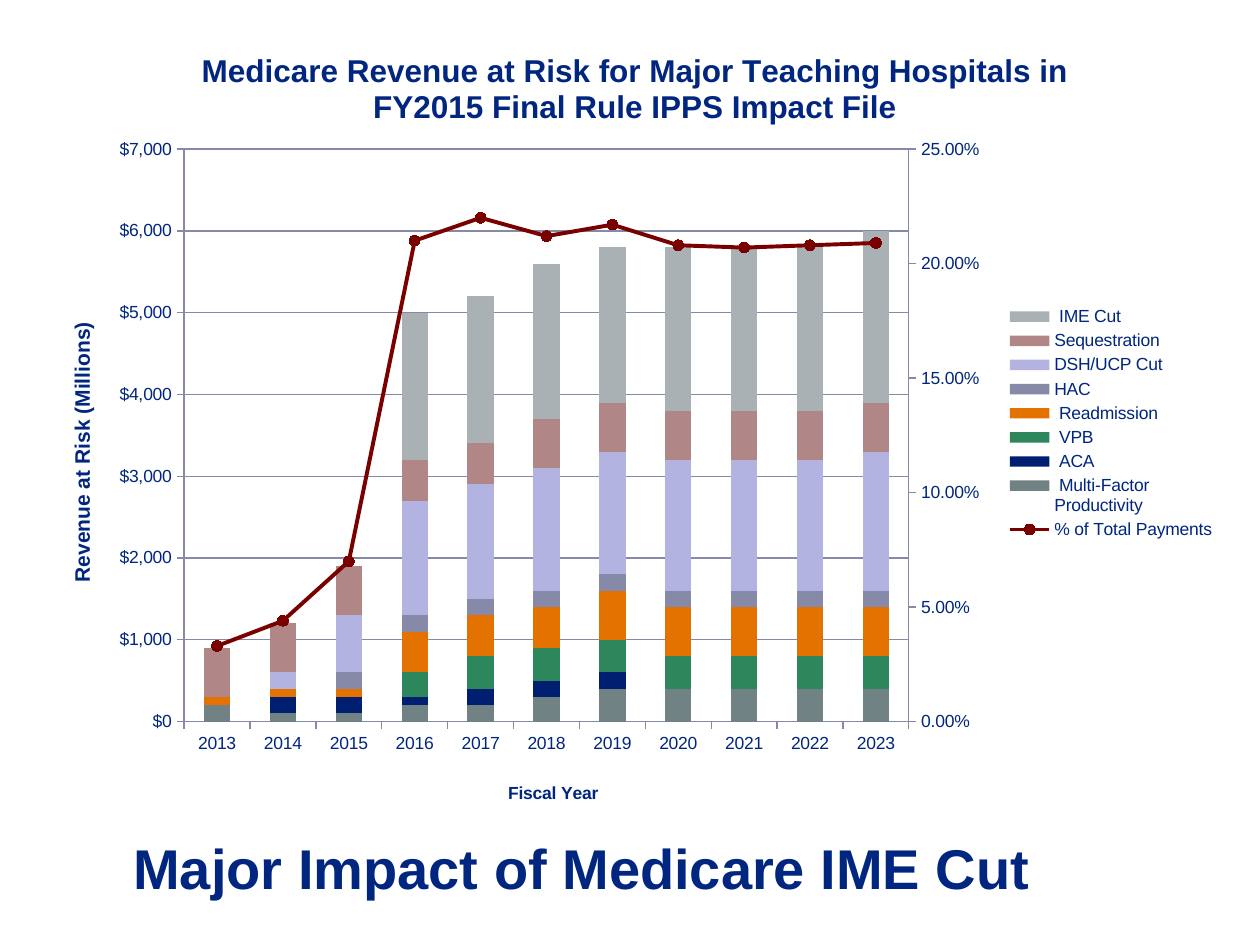
from copy import deepcopy
from typing import NamedTuple, Optional

from pptx import Presentation
from pptx.chart.axis import CategoryAxis, ValueAxis
from pptx.chart.data import CategoryChartData
from pptx.dml.color import RGBColor
from pptx.enum.chart import XL_CHART_TYPE, XL_LEGEND_POSITION, XL_MARKER_STYLE, XL_TICK_MARK
from pptx.oxml import parse_xml
from pptx.oxml.ns import nsdecls, qn
from pptx.util import Inches, Pt

COLORS = {
    "navy": "01267F", "deep_navy": "001F70", "slate": "708284", "green": "2E875C",
    "orange": "E37200", "blue_gray": "8689A8", "lavender": "B3B3E1",
    "rose": "B18686", "silver": "A9B1B4", "maroon": "7A0000",
}
FONT = "Arial"


class Series(NamedTuple):
    name: str
    color: str
    values: list
    number_format: str = '"$"#,##0'


class Layout(NamedTuple):
    """Place inside the chart, as fractions of its size."""
    x: float
    y: float
    w: Optional[float] = None
    h: Optional[float] = None


YEARS = [str(year) for year in range(2013, 2024)]
CUTS = [
    Series(" Multi-Factor\nProductivity", "slate",
           [200, 100, 100, 200, 200, 300, 400, 400, 400, 400, 400]),
    Series(" ACA", "deep_navy", [0, 200, 200, 100, 200, 200, 200, 0, 0, 0, 0]),
    Series(" VPB", "green", [0, 0, 0, 300, 400, 400, 400, 400, 400, 400, 400]),
    Series(" Readmission", "orange",
           [100, 100, 100, 500, 500, 500, 600, 600, 600, 600, 600]),
    Series("HAC", "blue_gray", [0, 0, 200, 200, 200, 200, 200, 200, 200, 200, 200]),
    Series("DSH/UCP Cut", "lavender",
           [0, 200, 700, 1400, 1400, 1500, 1500, 1600, 1600, 1600, 1700]),
    Series("Sequestration", "rose",
           [600, 600, 600, 500, 500, 600, 600, 600, 600, 600, 600]),
    Series(" IME Cut", "silver",
           [0, 0, 0, 1800, 1800, 1900, 1900, 2000, 2000, 2000, 2100]),
]
SHARE = Series("% of Total Payments", "maroon",
               [0.033, 0.044, 0.07, 0.21, 0.22, 0.212, 0.217, 0.208, 0.207, 0.208, 0.209],
               "0.00%")


def rgb(name: str) -> RGBColor:
    return RGBColor.from_string(COLORS[name])


def style_font(font, size: float, bold: bool = False) -> None:
    font.name = FONT
    font.size = Pt(size)
    font.bold = bold
    font.color.rgb = rgb("navy")


def place(element, layout: Layout, inner: bool = False) -> None:
    """Give a chart part a manual layout."""
    for old in element.findall(qn("c:layout")):
        element.remove(old)
    target = '<c:layoutTarget val="inner"/>' if inner else ""
    modes = '<c:xMode val="edge"/><c:yMode val="edge"/>'
    sizes = "".join(f'<c:{key} val="{value}"/>'
                    for key, value in layout._asdict().items() if value is not None)
    node = parse_xml(f'<c:layout {nsdecls("c")}><c:manualLayout>{target}{modes}{sizes}'
                     '</c:manualLayout></c:layout>')
    overlay = element.find(qn("c:overlay"))
    if overlay is None:
        element.insert(0, node)
    else:
        overlay.addprevious(node)


def write_title(title, text: str, size: float, layout: Layout) -> None:
    title.text_frame.text = text
    style_font(title.text_frame.paragraphs[0].font, size, bold=True)
    place(title._element, layout)


def style_axis(axis) -> None:
    axis.major_tick_mark = XL_TICK_MARK.OUTSIDE
    axis.minor_tick_mark = XL_TICK_MARK.NONE
    axis.format.line.color.rgb = rgb("blue_gray")
    axis.format.line.width = Pt(0.75)
    style_font(axis.tick_labels.font, 10)


def scale_value_axis(axis, maximum: float, step: float, number_format: str) -> None:
    axis.minimum_scale = 0
    axis.maximum_scale = maximum
    axis.major_unit = step
    axis.tick_labels.number_format = number_format
    axis.tick_labels.number_format_is_linked = False


def move_last_series_to_line(chart) -> None:
    """Turn the last column series into a line on its own right-hand axis."""
    bars = chart.plots[0]._element
    series = bars.findall(qn("c:ser"))[-1]
    for bar_setting in series.findall(qn("c:invertIfNegative")):
        series.remove(bar_setting)
    line_chart = parse_xml(
        f'<c:lineChart {nsdecls("c")}><c:grouping val="standard"/><c:varyColors val="0"/>'
        '<c:marker val="1"/><c:axId val="5001"/><c:axId val="5002"/></c:lineChart>')
    line_chart.insert(2, series)
    bars.addnext(line_chart)

    value_element = chart.value_axis._element
    right_element = deepcopy(value_element)
    hidden_element = deepcopy(chart.category_axis._element)
    value_element.addnext(right_element)
    right_element.addnext(hidden_element)
    for element, own_id, other_id in ((hidden_element, "5001", "5002"),
                                      (right_element, "5002", "5001")):
        element.find(qn("c:axId")).set("val", own_id)
        element.find(qn("c:crossAx")).set("val", other_id)
    right_element.find(qn("c:axPos")).set("val", "r")
    right_element.find(qn("c:crosses")).set("val", "max")

    CategoryAxis(hidden_element).visible = False
    right_axis = ValueAxis(right_element)
    right_axis.has_major_gridlines = False
    scale_value_axis(right_axis, 0.25, 0.05, SHARE.number_format)


def add_risk_chart(slide) -> None:
    data = CategoryChartData()
    data.categories = YEARS
    for item in [*CUTS, SHARE]:
        data.add_series(item.name, item.values, item.number_format)
    chart = slide.shapes.add_chart(
        XL_CHART_TYPE.COLUMN_STACKED, Inches(0.33), Inches(0.16),
        Inches(9.43), Inches(6.4), data).chart
    style_font(chart.font, 10)

    style_axis(chart.category_axis)
    value_axis = chart.value_axis
    style_axis(value_axis)
    scale_value_axis(value_axis, 7000, 1000, CUTS[0].number_format)
    value_axis.has_major_gridlines = True
    value_axis.major_gridlines.format.line.color.rgb = rgb("blue_gray")
    value_axis.major_gridlines.format.line.width = Pt(0.75)
    move_last_series_to_line(chart)

    columns, line = chart.plots
    columns.gap_width = 150
    columns.overlap = 100
    columns.vary_by_categories = False
    for series, item in zip(columns.series, CUTS):
        series.format.fill.solid()
        series.format.fill.fore_color.rgb = rgb(item.color)
    share = line.series[0]
    share.smooth = False
    share.format.line.color.rgb = rgb(SHARE.color)
    share.format.line.width = Pt(2.25)
    share.marker.style = XL_MARKER_STYLE.CIRCLE
    share.marker.size = 6
    share.marker.format.fill.solid()
    share.marker.format.fill.fore_color.rgb = rgb(SHARE.color)
    share.marker.format.line.color.rgb = rgb(SHARE.color)

    write_title(chart.chart_title, "Medicare Revenue at Risk for Major Teaching Hospitals in "
                "FY2015 Final Rule IPPS Impact File", 18, Layout(0.13, 0.03))
    write_title(chart.category_axis.axis_title, "Fiscal Year", 10, Layout(0.39, 0.94))
    value_title = value_axis.axis_title
    write_title(value_title, "Revenue at Risk (Millions)", 12, Layout(0.02, 0.37))
    value_title.text_frame._txBody.bodyPr.set("rot", "-5400000")
    value_title.text_frame._txBody.bodyPr.set("vert", "horz")

    chart.has_legend = True
    chart.legend.position = XL_LEGEND_POSITION.RIGHT
    chart.legend.include_in_layout = False
    style_font(chart.legend.font, 10)
    place(chart.legend._element, Layout(0.81, 0.35, 0.18, 0.3))
    place(columns._element.getparent(), Layout(0.12, 0.16, 0.61, 0.71), inner=True)


def add_headline(slide) -> None:
    frame = slide.shapes.add_textbox(
        Inches(0.96), Inches(6.57), Inches(7.34), Inches(0.64)).text_frame
    frame.word_wrap = True
    frame.text = "Major Impact of Medicare IME Cut"
    style_font(frame.paragraphs[0].font, 32, bold=True)


def main() -> None:
    presentation = Presentation()
    presentation.slide_width = Inches(10)
    presentation.slide_height = Inches(7.5)
    slide = presentation.slides.add_slide(presentation.slide_layouts[6])
    add_risk_chart(slide)
    add_headline(slide)
    presentation.save("out.pptx")


if __name__ == "__main__":
    main()
